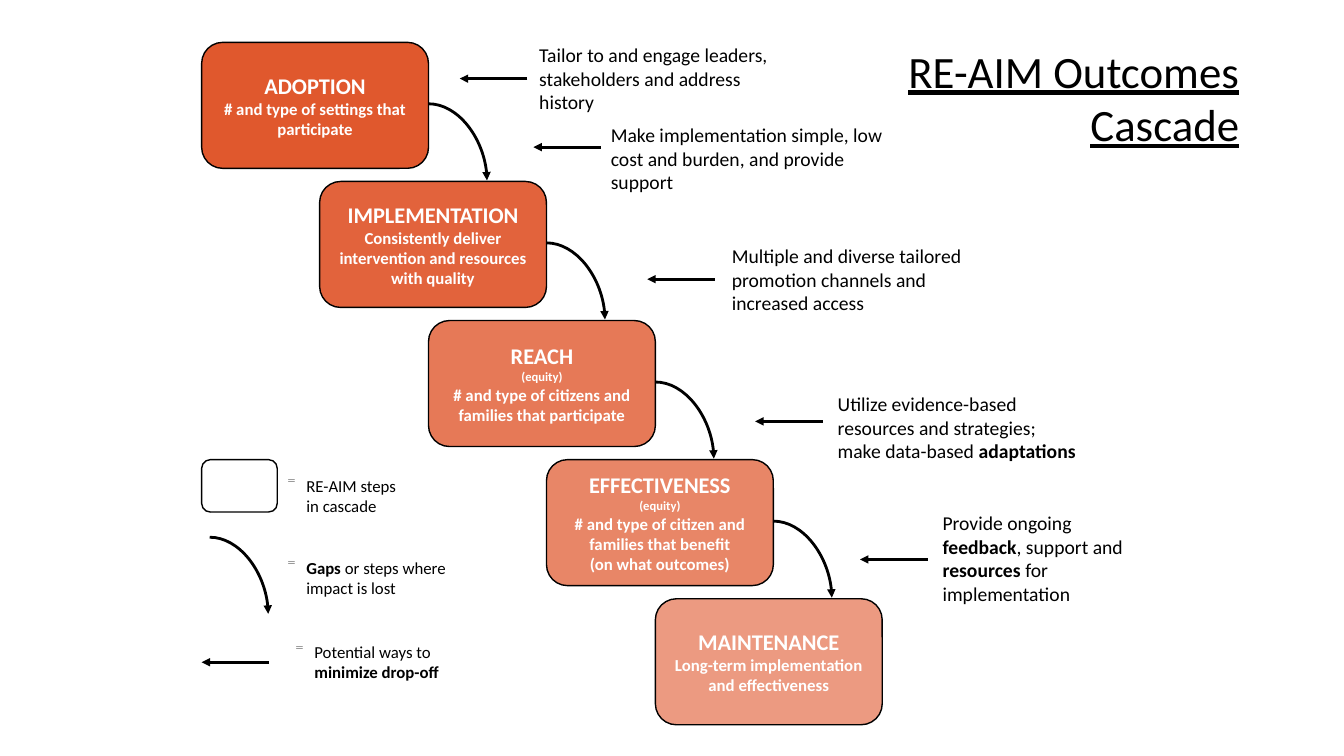
from collections import namedtuple
from dataclasses import dataclass

from lxml import etree
from pptx import Presentation
from pptx.dml.color import RGBColor
from pptx.enum.shapes import MSO_CONNECTOR, MSO_SHAPE
from pptx.enum.text import MSO_ANCHOR, PP_ALIGN
from pptx.oxml.ns import qn
from pptx.util import Inches, Pt

ROUND = MSO_SHAPE.ROUNDED_RECTANGLE
LINE, CURVE = MSO_CONNECTOR.STRAIGHT, MSO_CONNECTOR.CURVE
LEFT, CENTER, RIGHT = PP_ALIGN.LEFT, PP_ALIGN.CENTER, PP_ALIGN.RIGHT
MIDDLE = MSO_ANCHOR.MIDDLE

Box = namedtuple("Box", "left top width height")


@dataclass(frozen=True)
class Theme:
    font: str = "Calibri"
    ink: str = "000000"
    paper: str = "FFFFFF"
    bullet: str = "7F7F7F"
    steps: tuple = ("E0582D", "DF5327")
    title: int = 32
    head: int = 16
    note: int = 14
    body: int = 12
    small: int = 9
    edge: float = 1
    arrow: float = 2


THEME = Theme()
ARROW = 0.67
CURVE_W, CURVE_H = 0.58, 0.76

STEPS = [
    ("ADOPTION", "", ["# and type of settings that participate"]),
    ("IMPLEMENTATION", "",
     ["Consistently deliver intervention and resources with quality"]),
    ("REACH", "(equity)",
     ["# and type of citizens and families that participate"]),
    ("EFFECTIVENESS", "(equity)",
     ["# and type of citizen and families that benefit",
      "(on what outcomes)"]),
    ("MAINTENANCE", "", ["Long-term implementation and effectiveness"]),
]

# Arrow tip, text box, text; asterisks enclose bold words
NOTES = [
    ((4.56, 0.78), Box(5.25, 0.38, 2.5, 0.81),
     "Tailor to and engage leaders, stakeholders and address history"),
    ((5.29, 1.46), Box(5.96, 1.17, 2.92, 0.81),
     "Make implementation simple, low cost and burden, and provide support"),
    ((6.42, 2.77), Box(7.16, 2.37, 2.75, 0.81),
     "Multiple and diverse tailored promotion channels and increased access"),
    ((7.49, 4.18), Box(8.21, 3.84, 2.62, 0.81),
     "Utilize evidence-based resources and strategies; "
     "make data-based *adaptations*"),
    ((8.53, 5.55), Box(9.25, 5.02, 2, 1.04),
     "Provide ongoing *feedback*, support and *resources* for implementation"),
]


def rgb(code):
    return RGBColor.from_string(code)


def write(para, text, size, color=THEME.ink, align=LEFT):
    """Fill a paragraph; parts between asterisks become bold."""
    para.alignment = align
    for i, part in enumerate(text.split("*")):
        if part:
            run = para.add_run()
            run.text = part
            font = run.font
            font.name, font.size, font.bold = THEME.font, Pt(size), i % 2 == 1
            font.color.rgb = rgb(color)


def add_text(slide, box, text, size, align=LEFT, wrap=True):
    """Add a text box with one paragraph per line of text."""
    frame = slide.shapes.add_textbox(*map(Inches, box)).text_frame
    frame.word_wrap = wrap
    for i, line in enumerate(text.split("\n")):
        para = frame.add_paragraph() if i else frame.paragraphs[0]
        write(para, line, size, align=align)
    return frame


def add_card(slide, box, fill, alpha=100):
    card = slide.shapes.add_shape(ROUND, *map(Inches, box))
    card.shadow.inherit = False
    card.fill.solid()
    card.fill.fore_color.rgb = rgb(fill)
    if alpha < 100:
        color = card.element.spPr.find(qn("a:solidFill"))[0]
        etree.SubElement(color, qn("a:alpha"), val=str(alpha * 1000))
    card.line.color.rgb = rgb(THEME.ink)
    card.line.width = Pt(THEME.edge)
    return card


def add_arrow(slide, kind, start, end):
    arrow = slide.shapes.add_connector(kind, *map(Inches, start + end))
    arrow.line.color.rgb = rgb(THEME.ink)
    arrow.line.width = Pt(THEME.arrow)
    props = arrow.element.spPr
    if kind == CURVE:
        props.find(qn("a:prstGeom")).set("prst", "curvedConnector2")
    etree.SubElement(props.find(qn("a:ln")), qn("a:tailEnd"), type="triangle")
    etree.SubElement(props, qn("a:effectLst"))


def add_gap(slide, left, top):
    add_arrow(slide, CURVE, (left, top), (left + CURVE_W, top + CURVE_H))


def add_way(slide, left, top):
    add_arrow(slide, LINE, (left + ARROW, top), (left, top))


def add_bullet(para):
    props = para._p.get_or_add_pPr()
    props.set("marL", str(Inches(0.19)))
    props.set("indent", str(-Inches(0.19)))
    color = etree.SubElement(props, qn("a:buClr"))
    etree.SubElement(color, qn("a:srgbClr"), val=THEME.bullet)
    etree.SubElement(props, qn("a:buChar"), char="⁼")


def draw_step(slide, box, step, fill, alpha):
    head, aside, body = step
    frame = add_card(slide, box, fill, alpha).text_frame
    frame.word_wrap = True
    frame.vertical_anchor = MIDDLE
    lines = [(head, THEME.head)]
    if aside:
        lines.append((aside, THEME.small))
    lines += [(text, THEME.body) for text in body]
    for i, (text, size) in enumerate(lines):
        para = frame.add_paragraph() if i else frame.paragraphs[0]
        write(para, f"*{text}*", size, THEME.paper, CENTER)


def draw_steps(slide, box):
    """Stagger the steps down the box and join them with curves."""
    wide, high = 2.25, 1.25
    pitch = (box.height - high) / (len(STEPS) - 1)
    for i, step in enumerate(STEPS):
        left = box.left + wide * (i // 2) + 1.17 * (i % 2)
        top = box.top + pitch * i
        draw_step(slide, Box(left, top, wide, high), step,
                  THEME.steps[i % 2], 100 - 10 * i)
        if i < len(STEPS) - 1:
            add_gap(slide, left + wide, top + 0.61)


def draw_legend(slide, box):
    left, top = box.left, box.top
    add_card(slide, Box(left, top, 0.75, 0.52), THEME.paper)
    add_gap(slide, left + 0.08, top + 0.77)
    add_way(slide, left, top + 2.01)
    rows = [
        (0.75, 0.11, 1.37, "RE-AIM steps in cascade"),
        (0.75, 0.92, 1.81, "*Gaps* or steps where impact is lost"),
        (0.83, 1.76, 1.63, "Potential ways to *minimize drop-off*"),
    ]
    for x, y, wide, text in rows:
        spot = Box(left + x, top + y, wide, 0.5)
        frame = add_text(slide, spot, text, THEME.body)
        add_bullet(frame.paragraphs[0])


def draw_note(slide, box, tip, text):
    add_way(slide, *tip)
    add_text(slide, box, text, THEME.note)


def draw_title(slide, box):
    frame = add_text(slide, box, "RE-AIM Outcomes\nCascade",
                     THEME.title, RIGHT, wrap=False)
    for para in frame.paragraphs:
        para.runs[0].font.underline = True


def main():
    deck = Presentation()
    deck.slide_width, deck.slide_height = Inches(13.33), Inches(7.5)
    slide = deck.slides.add_slide(deck.slide_layouts[6])
    draw_steps(slide, Box(2, 0.42, 6.75, 6.77))
    draw_title(slide, Box(8.87, 0.38, 3.52, 1.18))
    draw_legend(slide, Box(2, 4.56, 2.56, 2.26))
    for tip, box, text in NOTES:
        draw_note(slide, box, tip, text)
    deck.save("out.pptx")


if __name__ == "__main__":
    main()
